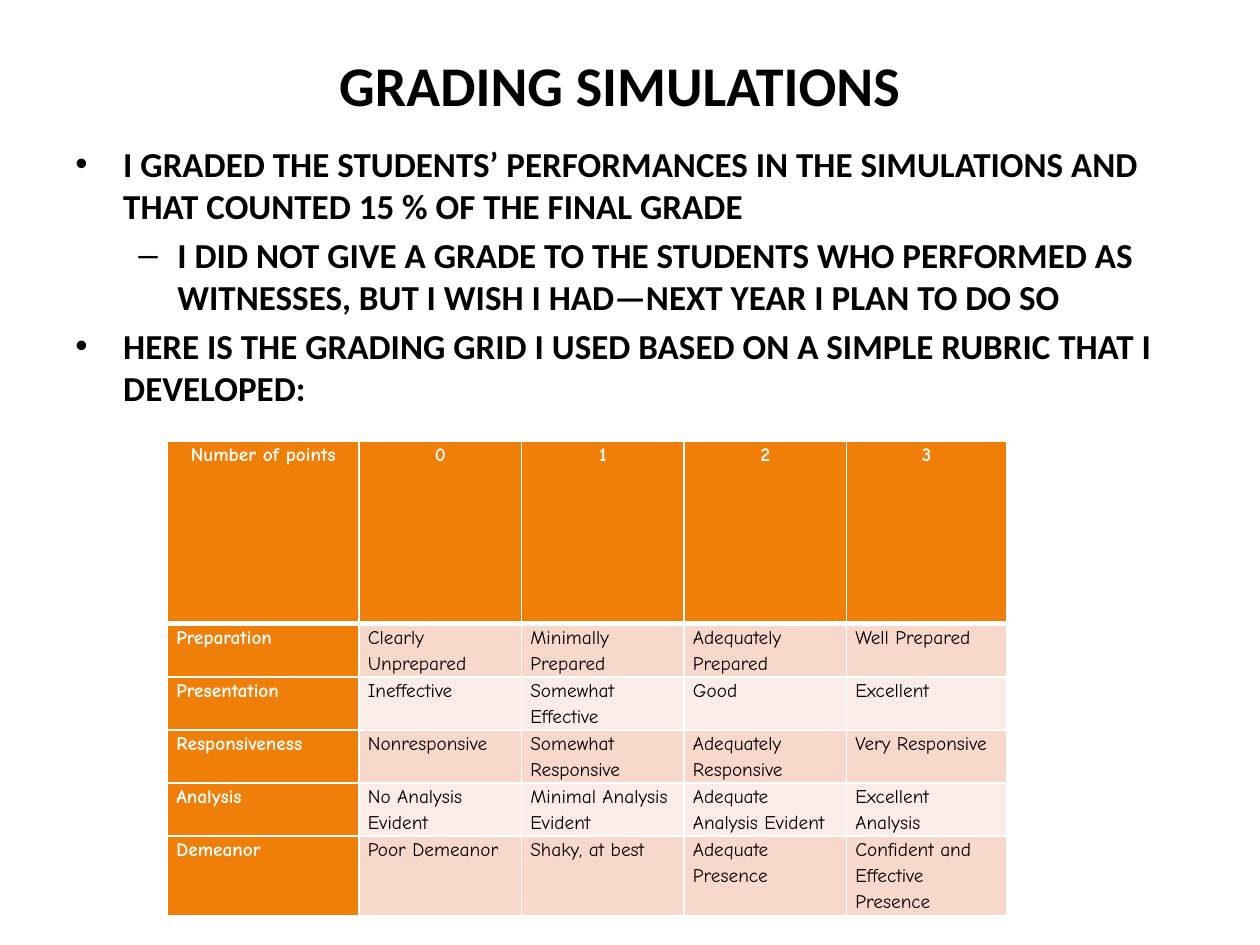
from dataclasses import dataclass

from lxml import etree
from pptx import Presentation
from pptx.dml.color import RGBColor
from pptx.enum.text import MSO_ANCHOR, PP_ALIGN
from pptx.oxml.ns import qn
from pptx.util import Inches, Pt

CENTER, LEFT = PP_ALIGN.CENTER, PP_ALIGN.LEFT
MIDDLE, TOP = MSO_ANCHOR.MIDDLE, MSO_ANCHOR.TOP


@dataclass(frozen=True)
class Theme:
    """Colours, fonts and type sizes of the slide."""
    text: str = "000000"
    white: str = "FFFFFF"
    accent: str = "F07F09"
    bands: tuple = ("F9D8CC", "FCECE7")
    main_font: str = "Calibri"
    table_font: str = "Comic Neue"
    title_size: int = 32
    body_size: int = 20
    table_size: int = 11


THEME = Theme()
TITLE = "GRADING SIMULATIONS"
BULLETS = [
    (0, "I GRADED THE STUDENTS’ PERFORMANCES IN THE SIMULATIONS AND THAT COUNTED 15 % OF THE FINAL GRADE"),
    (1, "I DID NOT GIVE A GRADE TO THE STUDENTS WHO PERFORMED AS WITNESSES, BUT I WISH I HAD—NEXT YEAR I PLAN TO DO SO"),
    (0, "HERE IS THE GRADING GRID I USED BASED ON A SIMPLE RUBRIC THAT I DEVELOPED:"),
]
BULLET_LEVELS = [("•", 0.38, 0.38), ("–", 0.81, 0.31)]
RUBRIC = [
    ["Number of points", "0", "1", "2", "3"],
    ["Preparation", "Clearly Unprepared", "Minimally Prepared", "Adequately Prepared", "Well Prepared"],
    ["Presentation", "Ineffective", "Somewhat Effective", "Good", "Excellent"],
    ["Responsiveness", "Nonresponsive", "Somewhat Responsive", "Adequately Responsive", "Very Responsive"],
    ["Analysis", "No Analysis Evident", "Minimal Analysis Evident", "Adequate Analysis Evident", "Excellent Analysis"],
    ["Demeanor", "Poor Demeanor", "Shaky, at best", "Adequate Presence", "Confident and Effective Presence"],
]
COLUMN_WIDTHS = [1.52, 1.29, 1.29, 1.29, 1.27]
ROW_HEIGHTS = [1.45, 0.4, 0.4, 0.4, 0.4, 0.6]


def apply_format(target, values):
    """Set each attribute named in values on the target."""
    for name, value in values.items():
        setattr(target, name, value)


def write_run(paragraph, text, font_name, size, color, bold=True):
    """Add one formatted run to the paragraph."""
    run = paragraph.add_run()
    run.text = text
    apply_format(run.font, {"name": font_name, "size": Pt(size), "bold": bold})
    run.font.color.rgb = RGBColor.from_string(color)


def add_text_frame(slide, box, anchor):
    """Add a wrapping text box and return its frame."""
    frame = slide.shapes.add_textbox(*map(Inches, box)).text_frame
    apply_format(frame, {"word_wrap": True, "vertical_anchor": anchor})
    return frame


def add_title(slide, box):
    """Place the centred title in the box."""
    paragraph = add_text_frame(slide, box, MIDDLE).paragraphs[0]
    paragraph.alignment = CENTER
    write_run(paragraph, TITLE, THEME.main_font, THEME.title_size, THEME.text)


def set_bullet(paragraph, level):
    """Give the paragraph its level's hanging bullet."""
    character, margin, hanging = BULLET_LEVELS[level]
    paragraph.level = level
    properties = paragraph._p.get_or_add_pPr()
    properties.set("marL", str(Inches(margin)))
    properties.set("indent", str(-Inches(hanging)))
    etree.SubElement(properties, qn("a:buFont"), typeface="Arial")
    etree.SubElement(properties, qn("a:buChar"), char=character)


def add_bullets(slide, box):
    """Place the two-level bullet list in the box."""
    frame = add_text_frame(slide, box, TOP)
    for index, (level, text) in enumerate(BULLETS):
        paragraph = frame.add_paragraph() if index else frame.paragraphs[0]
        set_bullet(paragraph, level)
        paragraph.space_before = Pt(4 if index else 0)
        write_run(paragraph, text, THEME.main_font, THEME.body_size, THEME.text)


def set_borders(cell, row):
    """Draw white cell borders, thicker below the header row."""
    widths = {"L": 1, "R": 1, "T": 3 if row == 1 else 1, "B": 3 if row == 0 else 1}
    properties = cell._tc.get_or_add_tcPr()
    for side, width in widths.items():
        line = etree.SubElement(properties, qn(f"a:ln{side}"), w=str(Pt(width)))
        fill = etree.SubElement(line, qn("a:solidFill"))
        etree.SubElement(fill, qn("a:srgbClr"), val=THEME.white)


def fill_cell(cell, text, row, column):
    """Write and style one rubric cell."""
    is_heading = row == 0 or column == 0
    apply_format(cell, {"margin_left": Inches(0.07), "margin_right": Inches(0.07),
                        "margin_top": 0, "margin_bottom": 0})
    set_borders(cell, row)
    cell.fill.solid()
    color = THEME.accent if is_heading else THEME.bands[(row - 1) % 2]
    cell.fill.fore_color.rgb = RGBColor.from_string(color)
    paragraph = cell.text_frame.paragraphs[0]
    apply_format(paragraph, {"alignment": LEFT if row else CENTER, "line_spacing": 1.15})
    write_run(paragraph, text, THEME.table_font, THEME.table_size,
              THEME.white if is_heading else THEME.text, is_heading)


def add_rubric(slide, box):
    """Place the grading table in the box."""
    table = slide.shapes.add_table(len(RUBRIC), len(COLUMN_WIDTHS), *map(Inches, box)).table
    for column, width in zip(table.columns, COLUMN_WIDTHS):
        column.width = Inches(width)
    for row, height in zip(table.rows, ROW_HEIGHTS):
        row.height = Inches(height)
    for row, texts in enumerate(RUBRIC):
        for column, text in enumerate(texts):
            fill_cell(table.cell(row, column), text, row, column)


def main():
    """Build and save the presentation."""
    presentation = Presentation()
    apply_format(presentation, {"slide_width": Inches(10), "slide_height": Inches(7.5)})
    slide = presentation.slides.add_slide(presentation.slide_layouts[6])
    add_title(slide, (0.42, 0.25, 9, 0.83))
    add_bullets(slide, (0.5, 1.08, 9, 6.17))
    add_rubric(slide, (1.33, 3.5, sum(COLUMN_WIDTHS), sum(ROW_HEIGHTS)))
    presentation.save("out.pptx")


if __name__ == "__main__":
    main()
